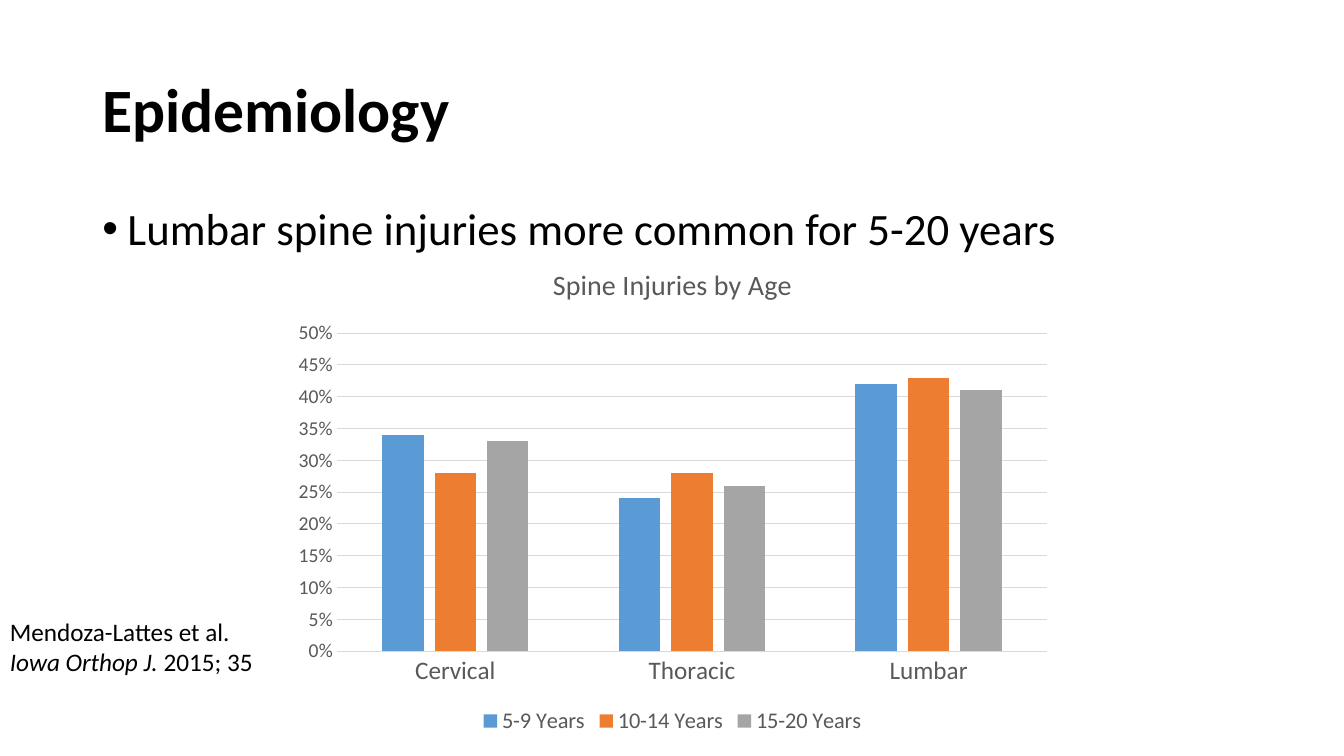
"""Build the Epidemiology slide with its spine injury chart."""
from lxml import etree
from pptx import Presentation
from pptx.chart.data import CategoryChartData
from pptx.dml.color import RGBColor
from pptx.enum import chart as ch, text as tx
from pptx.oxml import ns
from pptx.util import Pt

PX = 9525
FONT = "Calibri"
BLACK = RGBColor(0, 0, 0)
GREY = RGBColor(0x59, 0x59, 0x59)
RULE = RGBColor(0xD9, 0xD9, 0xD9)
BLUE = RGBColor(0x5B, 0x9B, 0xD5)
ORANGE = RGBColor(0xED, 0x7D, 0x31)
SILVER = RGBColor(0xA5, 0xA5, 0xA5)

TITLE = [[("Epidemiology", 44, {"bold": True})]]
POINT = [[("Lumbar spine injuries more common for 5-20 years", 32, {})]]
CITE = [
    [("Mendoza-Lattes et al.", 18, {})],
    [("Iowa Orthop J.", 18, {"italic": True}), (" 2015; 35", 18, {})],
]
BOXES = {
    "title": (88, 38, 1104, 139),
    "point": (88, 192, 1104, 48),
    "cite": (0, 582, 300, 68),
    "chart": (269, 238, 743, 466),
}
HEAD = "Spine Injuries by Age"
PARTS = ["Cervical", "Thoracic", "Lumbar"]
SERIES = [
    ("5-9 Years", (0.34, 0.24, 0.42), BLUE),
    ("10-14 Years", (0.28, 0.28, 0.43), ORANGE),
    ("15-20 Years", (0.33, 0.26, 0.41), SILVER),
]
HEAD_AT = {"xMode": "edge", "yMode": "edge", "x": 0.34, "y": 0.02}
PLOT_AT = {"layoutTarget": "inner", "xMode": "edge", "yMode": "edge",
           "x": 0.07, "y": 0.17, "w": 0.91, "h": 0.65}


def assign(obj, **vals):
    for key, val in vals.items():
        setattr(obj, key, val)


def style(font, size, color=BLACK, **more):
    assign(font, name=FONT, size=Pt(size), **{"bold": False, **more})
    font.color.rgb = color


def spot(name):
    return [n * PX for n in BOXES[name]]


def write(frame, lines):
    frame.word_wrap = True
    for i, line in enumerate(lines):
        para = frame.add_paragraph() if i else frame.paragraphs[0]
        para.alignment = tx.PP_ALIGN.LEFT
        for words, size, more in line:
            run = para.add_run()
            run.text = words
            style(run.font, size, **more)


def add_text(slide, name, lines):
    box = slide.shapes.add_textbox(*spot(name))
    write(box.text_frame, lines)
    return box.text_frame.paragraphs[0]


def add_bullet(para):
    props = para._p.get_or_add_pPr()
    props.set("marL", str(24 * PX))
    props.set("indent", str(-24 * PX))
    etree.SubElement(props, ns.qn("a:buFont")).set("typeface", "Arial")
    etree.SubElement(props, ns.qn("a:buChar")).set("char", "•")


def lay_out(node, index, vals):
    for old in node.findall(ns.qn("c:layout")):
        node.remove(old)
    layout = etree.Element(ns.qn("c:layout"))
    manual = etree.SubElement(layout, ns.qn("c:manualLayout"))
    for key, val in vals.items():
        etree.SubElement(manual, ns.qn("c:" + key)).set("val", str(val))
    node.insert(index, layout)


def add_chart(slide):
    data = CategoryChartData(number_format="0%")
    data.categories = PARTS
    for name, vals, _ in SERIES:
        data.add_series(name, vals)
    chart = slide.shapes.add_chart(
        ch.XL_CHART_TYPE.COLUMN_CLUSTERED, *spot("chart"), data).chart
    style(chart.font, 10)
    chart.has_title = True
    head = chart.chart_title.text_frame.paragraphs[0].add_run()
    head.text = HEAD
    style(head.font, 20, GREY)

    plot = chart.plots[0]
    assign(plot, gap_width=219, overlap=-27, vary_by_categories=False)
    for ser, (_, _, color) in zip(plot.series, SERIES):
        ser.format.fill.solid()
        ser.format.fill.fore_color.rgb = color

    cat, val = chart.category_axis, chart.value_axis
    for axis, size in ((cat, 18), (val, 14)):
        assign(axis, major_tick_mark=ch.XL_TICK_MARK.NONE,
               minor_tick_mark=ch.XL_TICK_MARK.NONE)
        style(axis.tick_labels.font, size, GREY)
    assign(val, minimum_scale=0, maximum_scale=0.5, major_unit=0.05,
           has_major_gridlines=True)
    assign(val.tick_labels, number_format="0%", number_format_is_linked=False)
    val.format.line.fill.background()
    for line in (cat.format.line, val.major_gridlines.format.line):
        line.color.rgb = RULE
        line.width = Pt(0.75)

    chart.has_legend = True
    assign(chart.legend, position=ch.XL_LEGEND_POSITION.BOTTOM,
           include_in_layout=False)
    style(chart.legend.font, 16, GREY)
    root = chart.element
    lay_out(root.find(".//" + ns.qn("c:title")), 1, HEAD_AT)
    lay_out(root.find(".//" + ns.qn("c:plotArea")), 0, PLOT_AT)


def main():
    deck = Presentation()
    assign(deck, slide_width=1280 * PX, slide_height=720 * PX)
    slide = deck.slides.add_slide(deck.slide_layouts[5])
    title = slide.shapes.title
    assign(title, **dict(zip(("left", "top", "width", "height"),
                             spot("title"))))
    write(title.text_frame, TITLE)
    title.text_frame.vertical_anchor = tx.MSO_ANCHOR.MIDDLE
    title.text_frame.paragraphs[0].line_spacing = 0.9
    point = add_text(slide, "point", POINT)
    point.line_spacing = 0.9
    add_bullet(point)
    add_text(slide, "cite", CITE)
    add_chart(slide)
    deck.save("out.pptx")


if __name__ == "__main__":
    main()
